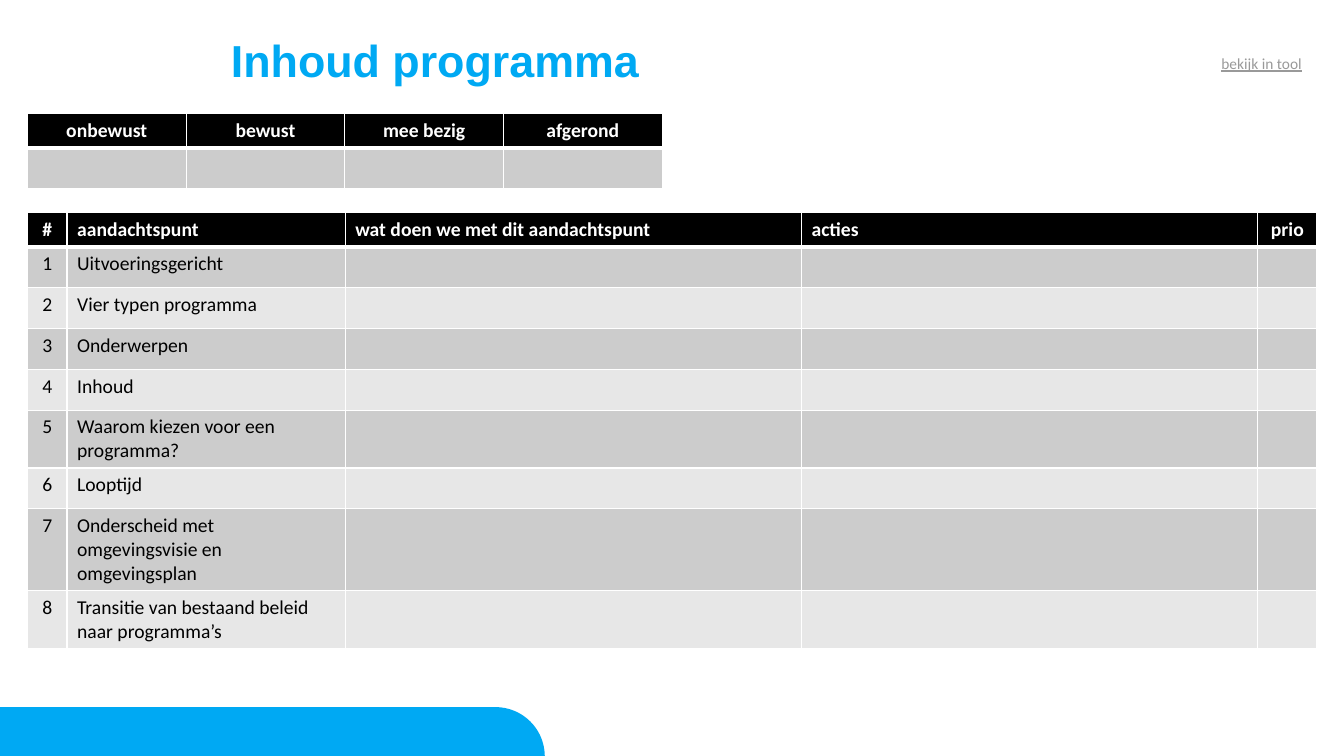
from math import cos, pi, sin

from lxml import etree
from pptx import Presentation
from pptx.dml.color import RGBColor
from pptx.enum.text import MSO_ANCHOR as Anchor, MSO_AUTO_SIZE as AutoSize, PP_ALIGN as Align
from pptx.oxml.ns import qn
from pptx.util import Cm, Pt

BLUE = RGBColor(0x00, 0xA9, 0xF3)
BLACK = RGBColor(0x00, 0x00, 0x00)
WHITE = RGBColor(0xFF, 0xFF, 0xFF)
GREY = RGBColor(0x99, 0x99, 0x99)
BANDS = (RGBColor(0xCC, 0xCC, 0xCC), RGBColor(0xE7, 0xE7, 0xE7))

HEADER_HEIGHT, ROW_HEIGHT = 0.85, 1.03
STATUSES = ("onbewust", "bewust", "mee bezig", "afgerond")
HEADINGS = ("#", "aandachtspunt", "wat doen we met dit aandachtspunt", "acties", "prio")
TOPICS = (
    "Uitvoeringsgericht",
    "Vier typen programma",
    "Onderwerpen",
    "Inhoud",
    "Waarom kiezen voor een programma?",
    "Looptijd",
    "Onderscheid met omgevingsvisie en omgevingsplan",
    "Transitie van bestaand beleid naar programma’s",
)


class ProgrammeSlide:
    """Holds the house style and the slide being filled."""

    heading_font, body_font = "Arial", "Calibri"

    def __init__(self, deck):
        self.slide = deck.slides.add_slide(deck.slide_layouts[5])
        self.shapes = self.slide.shapes

    def add_text(self, paragraph, text, size, color, font=body_font, bold=False, underline=False):
        run = paragraph.add_run()
        run.text = text
        run.font.name, run.font.size = font, Pt(size)
        run.font.bold, run.font.underline = bold, underline
        run.font.color.rgb = color

    def place(self, shape, left, top, width, height):
        shape.left, shape.top = Cm(left), Cm(top)
        shape.width, shape.height = Cm(width), Cm(height)

    def title(self, text, *box):
        title = self.shapes.title
        self.place(title, *box)
        frame = title.text_frame
        frame.margin_left = frame.margin_right = frame.margin_top = frame.margin_bottom = 0
        frame.vertical_anchor, frame.auto_size = Anchor.MIDDLE, AutoSize.NONE
        paragraph = frame.paragraphs[0]
        paragraph.alignment, paragraph.line_spacing = Align.LEFT, 0.9
        self.add_text(paragraph, text, 32, BLUE, self.heading_font, bold=True)

    def label(self, text, *box):
        frame = self.shapes.add_textbox(*map(Cm, box)).text_frame
        frame.word_wrap = True
        self.add_text(frame.paragraphs[0], text, 11, GREY, underline=True)

    def rounded_bar(self, left, top, width, height, steps=24):
        """Bar whose top right corner is a full quarter circle."""
        right, bottom = left + width, top + height
        angles = [pi / 2 * (1 - step / steps) for step in range(steps + 1)]
        arc = [(Cm(right - height + height * cos(a)), Cm(bottom - height * sin(a)))
               for a in angles]
        builder = self.shapes.build_freeform(Cm(left), Cm(bottom))
        builder.add_line_segments([(Cm(left), Cm(top)), *arc], close=True)
        bar = builder.convert_to_shape()
        bar.shadow.inherit = False
        bar.fill.solid()
        bar.fill.fore_color.rgb = BLUE
        bar.line.fill.background()

    def style_cell(self, cell, fill, bottom_width):
        properties = cell._tc.get_or_add_tcPr()
        for side, width in (("L", 1), ("R", 1), ("T", 1), ("B", bottom_width)):
            border = etree.SubElement(properties, qn(f"a:ln{side}"), w=str(Pt(width)))
            solid = etree.SubElement(border, qn("a:solidFill"))
            etree.SubElement(solid, qn("a:srgbClr"), val=str(WHITE))
        cell.fill.solid()
        cell.fill.fore_color.rgb = fill

    def table(self, left, top, widths, rows, centred):
        heights = [HEADER_HEIGHT] + [ROW_HEIGHT] * (len(rows) - 1)
        table = self.shapes.add_table(
            len(rows), len(widths), Cm(left), Cm(top), Cm(sum(widths)), Cm(sum(heights))).table
        for column, width in zip(table.columns, widths):
            column.width = Cm(width)
        for r, (texts, height) in enumerate(zip(rows, heights)):
            table.rows[r].height = Cm(height)
            header = r == 0
            for c, text in enumerate(texts):
                cell = table.cell(r, c)
                self.style_cell(cell, BLACK if header else BANDS[(r - 1) % 2], 3 if header else 1)
                paragraph = cell.text_frame.paragraphs[0]
                paragraph.alignment = Align.CENTER if c in centred else Align.LEFT
                if text:
                    self.add_text(paragraph, text, 14, WHITE if header else BLACK, bold=header)


def main():
    deck = Presentation()
    deck.slide_width, deck.slide_height = Cm(33.87), Cm(19.05)
    page = ProgrammeSlide(deck)

    # Footer bar, in two overlapping parts
    for left in (-0.02, 6.26):
        page.rounded_bar(left, 17.82, 7.47, 1.24)

    # Heading
    page.title("Inhoud programma", 5.82, 0.86, 14.22, 1.45)

    # Points of attention
    topics = [(str(number), topic, "", "", "") for number, topic in enumerate(TOPICS, 1)]
    page.table(0.69, 5.36, (1, 7.01, 11.5, 11.5, 1.49), [HEADINGS, *topics], centred=(0, 4))

    # Status
    page.table(0.69, 2.87, [4] * len(STATUSES), [STATUSES, [""] * len(STATUSES)],
               centred=range(len(STATUSES)))

    # Pointer to the tool
    page.label("bekijk in tool", 30.53, 1.24, 2.64, 0.74)

    deck.save("out.pptx")


if __name__ == "__main__":
    main()
